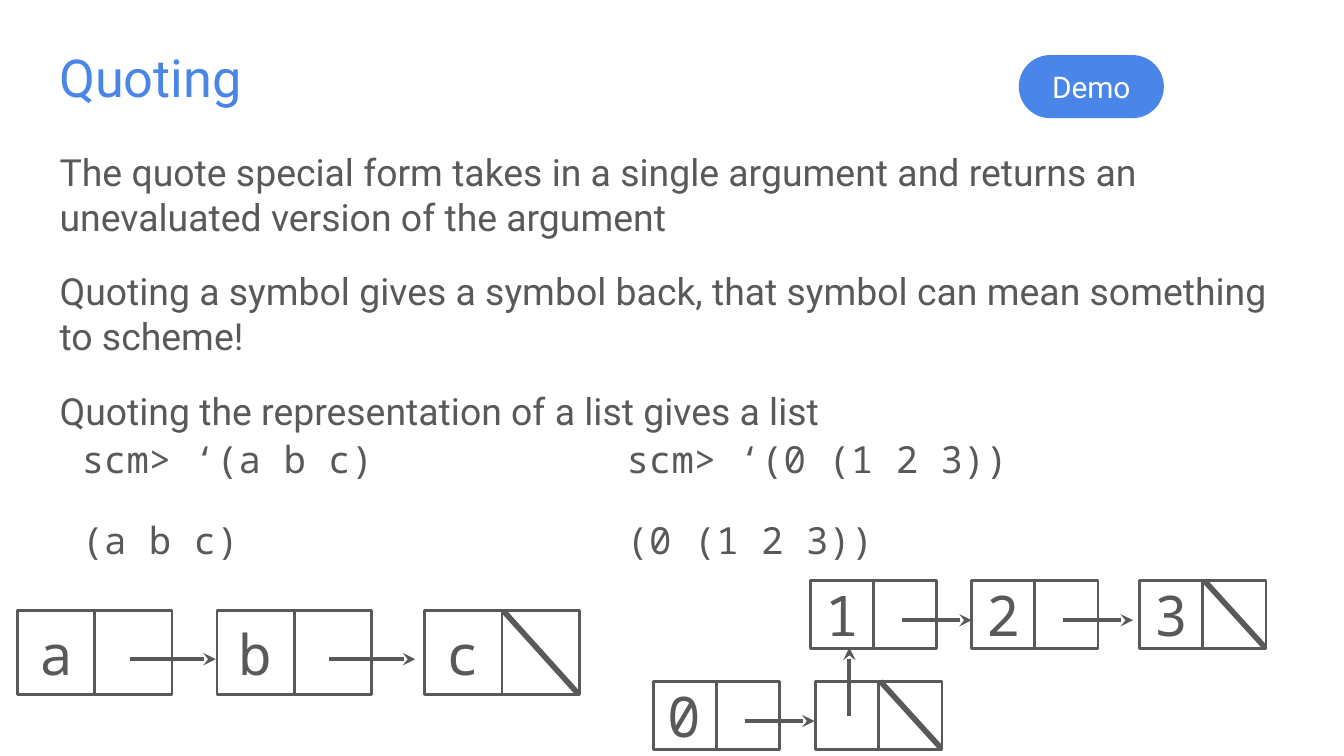
from dataclasses import dataclass

import lxml.etree
import pptx
import pptx.dml.color
import pptx.enum.shapes
import pptx.enum.text
import pptx.oxml.ns
import pptx.util

EMU_PER_PX = 4572
SHAPE = pptx.enum.shapes.MSO_SHAPE
ALIGN = pptx.enum.text.PP_ALIGN
ANCHOR = pptx.enum.text.MSO_ANCHOR


@dataclass(frozen=True)
class Theme:
    accent: str = "4A86E8"
    ink: str = "595959"
    paper: str = "FFFFFF"
    prose: str = "Roboto"
    code: str = "Noto Sans Mono"
    title_size: int = 28
    body_size: int = 20
    badge_size: int = 16
    value_size: int = 30
    cell_line: float = 1.5
    arrow_line: float = 2.25
    slash_line: float = 3
    inset: int = 20
    gap: int = 16


THEME = Theme()


def px(*lengths):
    return [pptx.util.Emu(length * EMU_PER_PX) for length in lengths]


def rgb(color):
    return pptx.dml.color.RGBColor.from_string(color)


def write(shape, lines, font, size, color, align=ALIGN.LEFT, anchor=ANCHOR.TOP):
    frame = shape.text_frame
    frame.text = "\n".join(lines)
    frame.word_wrap = True
    frame.auto_size = pptx.enum.text.MSO_AUTO_SIZE.NONE
    frame.vertical_anchor = anchor
    inset, = px(THEME.inset)
    frame.margin_left = frame.margin_right = inset
    frame.margin_top = frame.margin_bottom = inset
    for paragraph in frame.paragraphs:
        paragraph.alignment = align
        for run in paragraph.runs:
            run.font.name = font
            run.font.size = pptx.util.Pt(size)
            run.font.color.rgb = rgb(color)
    return frame.paragraphs


def add_heading(slide, box, text):
    title = slide.shapes.title
    title.left, title.top, title.width, title.height = px(*box)
    write(title, [text], THEME.prose, THEME.title_size, THEME.accent)


def add_paragraphs(slide, box, lines, font, spacing=1.0):
    textbox = slide.shapes.add_textbox(*px(*box))
    paragraphs = write(textbox, lines, font, THEME.body_size, THEME.ink)
    for paragraph in paragraphs:
        paragraph.line_spacing = spacing
    for paragraph in paragraphs[1:]:
        paragraph.space_before = pptx.util.Pt(THEME.gap)
    paragraphs[-1].space_after = pptx.util.Pt(THEME.gap)


def add_badge(slide, box, text):
    badge = slide.shapes.add_shape(SHAPE.ROUNDED_RECTANGLE, *px(*box))
    badge.shadow.inherit = False
    badge.adjustments[0] = 0.5
    badge.fill.solid()
    badge.fill.fore_color.rgb = rgb(THEME.accent)
    badge.line.fill.background()
    write(badge, [text], THEME.prose, THEME.badge_size, THEME.paper,
          ALIGN.CENTER, ANCHOR.MIDDLE)


def add_line(slide, start, end, weight, arrow=False):
    line = slide.shapes.add_connector(
        pptx.enum.shapes.MSO_CONNECTOR.STRAIGHT, *px(*start, *end))
    line.line.color.rgb = rgb(THEME.ink)
    line.line.width = pptx.util.Pt(weight)
    if arrow:
        stroke = line._element.spPr.find(pptx.oxml.ns.qn("a:ln"))
        lxml.etree.SubElement(stroke, pptx.oxml.ns.qn("a:tailEnd"), type="stealth")
    lxml.etree.SubElement(line._element.spPr, pptx.oxml.ns.qn("a:effectLst"))


def add_pair(slide, box, value):
    left, top, width, height = box
    pair = slide.shapes.add_group_shape()
    for offset, content in ((0, value), (width, "")):
        cell = pair.shapes.add_shape(
            SHAPE.RECTANGLE, *px(left + offset, top, width, height))
        cell.shadow.inherit = False
        cell.fill.background()
        cell.line.color.rgb = rgb(THEME.ink)
        cell.line.width = pptx.util.Pt(THEME.cell_line)
        if content:
            write(cell, [content], THEME.code, THEME.value_size, THEME.ink,
                  ALIGN.CENTER, ANCHOR.MIDDLE)


def add_linked_list(slide, box, values, offsets):
    left, top, width, height = box
    for value, offset in zip(values, offsets):
        add_pair(slide, (left + offset, top, width, height), value)
    arrow_y = top + round(0.58 * height)
    for offset in offsets[:-1]:
        tail = left + offset + round(1.45 * width)
        add_line(slide, (tail, arrow_y), (tail + round(1.11 * width), arrow_y),
                 THEME.arrow_line, arrow=True)
    last = left + offsets[-1] + width
    add_line(slide, (last + 2, top), (last + width - 2, top + height - 2),
             THEME.slash_line)


def add_nested_list(slide, box):
    left, top, width, height = box
    add_linked_list(slide, (left + 234, top, width, height), "123", (0, 240, 490))
    add_linked_list(slide, (left, top + 150, width, height), ("0", ""), (0, 242))
    add_line(slide, (left + 292, top + 202), (left + 292, top + height - 1),
             THEME.arrow_line, arrow=True)


def main():
    deck = pptx.Presentation()
    deck.slide_width, deck.slide_height = px(2000, 1125)
    slide = deck.slides.add_slide(deck.slide_layouts[5])

    add_heading(slide, (68, 48, 1864, 126), "Quoting")
    add_paragraphs(slide, (69, 202, 1864, 404), [
        "The quote special form takes in a single argument and returns an "
        "unevaluated version of the argument",
        "Quoting a symbol gives a symbol back, that symbol can mean something "
        "to scheme!",
        "Quoting the representation of a list gives a list",
    ], THEME.prose)
    add_paragraphs(slide, (102, 619, 782, 228),
                   ["scm> ‘(a b c)", "(a b c)"], THEME.code, 1.15)
    add_paragraphs(slide, (913, 619, 1086, 228),
                   ["scm> ‘(0 (1 2 3))", "(0 (1 2 3))"], THEME.code, 1.15)
    add_linked_list(slide, (26, 909, 115, 125), "abc", (0, 297, 606))
    add_nested_list(slide, (972, 864, 94, 101))
    add_badge(slide, (1516, 82, 216, 94), "Demo")

    deck.save("out.pptx")


if __name__ == "__main__":
    main()
